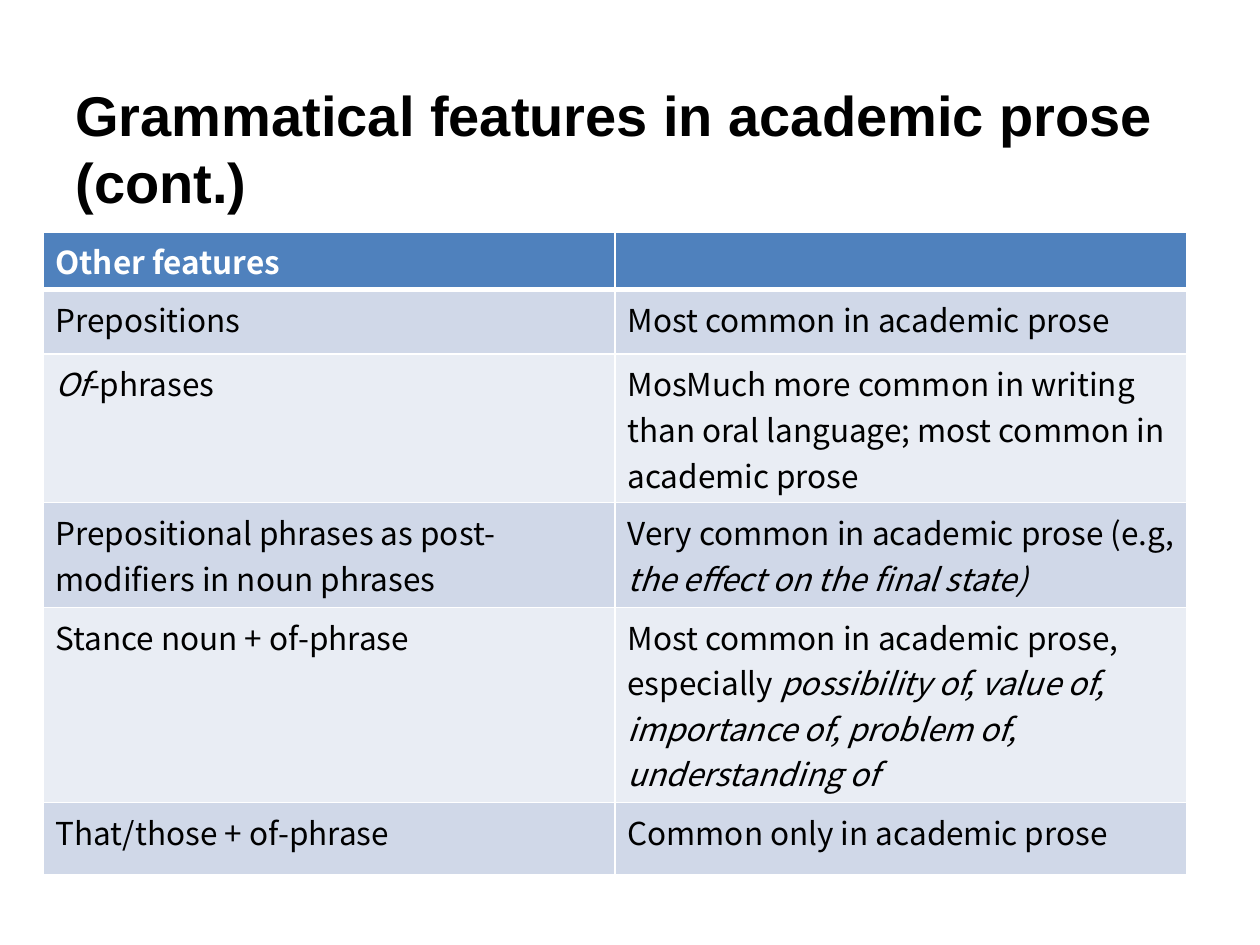
from dataclasses import dataclass

from lxml import etree
from pptx import Presentation
from pptx import util as u
from pptx.dml.color import RGBColor
from pptx.enum import text
from pptx.oxml import ns


@dataclass(frozen=True)
class Theme:
    black: str = "000000"
    white: str = "FFFFFF"
    head: str = "4F81BD"
    bands: tuple = ("D0D8E8", "E9EDF4")
    title_font: str = "Arial"
    body_font: str = "Noto Sans CJK KR"
    title_size: int = 32
    body_size: int = 18


THEME = Theme()
TITLE = "Grammatical features in academic prose (cont.)"
HEIGHTS = (0.46, 0.51, 1.18, 0.83, 1.55, 0.57)
# Each cell is a list of runs; runs alternate upright, italic, upright.
ROWS = (
    (["Other features"], []),
    (["Prepositions"], ["Most common in academic prose"]),
    (["", "Of", "-phrases"],
     ["MosMuch more common in writing than oral language; "
      "most common in academic prose"]),
    (["Prepositional phrases as post- modifiers in noun phrases"],
     ["Very common in academic prose (e.g, ",
      "the effect on the final state)"]),
    (["Stance noun + of-phrase"],
     ["Most common in academic prose, especially ",
      "possibility of, value of, importance of, problem of, "
      "understanding of"]),
    (["That/those + of-phrase"], ["Common only in academic prose"]),
)


def add_run(para, words, color, **form):
    run = para.add_run()
    run.text = words
    for name, value in form.items():
        setattr(run.font, name, value)
    run.font.color.rgb = RGBColor.from_string(color)


def add_title(slide):
    box = slide.shapes.add_textbox(
        u.Inches(0.5), u.Inches(0.63), u.Inches(9), u.Inches(1.08))
    frame = box.text_frame
    frame.word_wrap = True
    frame.vertical_anchor = text.MSO_ANCHOR.MIDDLE
    add_run(frame.paragraphs[0], TITLE, THEME.black, bold=True,
            name=THEME.title_font, size=u.Pt(THEME.title_size))


def add_edges(cell, base):
    """Draw white cell borders, with the bottom one base points wide."""
    props = cell._tc.get_or_add_tcPr()
    widths = {"lnL": 1, "lnR": 1, "lnT": 1, "lnB": base}
    for spot, (tag, width) in enumerate(widths.items()):
        line = etree.Element(ns.qn(f"a:{tag}"), w=str(u.Pt(width)))
        fill = etree.SubElement(line, ns.qn("a:solidFill"))
        etree.SubElement(fill, ns.qn("a:srgbClr"), val=THEME.white)
        props.insert(spot, line)


def fill_cell(cell, runs, is_head, back):
    cell.margin_right = u.Inches(0.05)
    cell.fill.solid()
    cell.fill.fore_color.rgb = RGBColor.from_string(back)
    add_edges(cell, 3 if is_head else 1)
    para = cell.text_frame.paragraphs[0]
    para.font.size = u.Pt(THEME.body_size)
    for spot, words in enumerate(runs):
        if words:
            add_run(para, words, THEME.white if is_head else THEME.black,
                    name=THEME.body_font, size=u.Pt(THEME.body_size),
                    bold=is_head, italic=spot % 2 == 1)


def add_features(slide):
    table = slide.shapes.add_table(
        len(ROWS), 2, u.Inches(0.34), u.Inches(1.84),
        u.Inches(9.08), u.Inches(sum(HEIGHTS))).table
    for r, (cells, height) in enumerate(zip(ROWS, HEIGHTS)):
        table.rows[r].height = u.Inches(height)
        back = THEME.bands[(r - 1) % 2] if r else THEME.head
        for c, runs in enumerate(cells):
            fill_cell(table.cell(r, c), runs, r == 0, back)


def main():
    deck = Presentation()
    deck.slide_width, deck.slide_height = u.Inches(10), u.Inches(7.5)
    slide = deck.slides.add_slide(deck.slide_layouts[6])
    add_title(slide)
    add_features(slide)
    deck.save("out.pptx")


if __name__ == "__main__":
    main()
